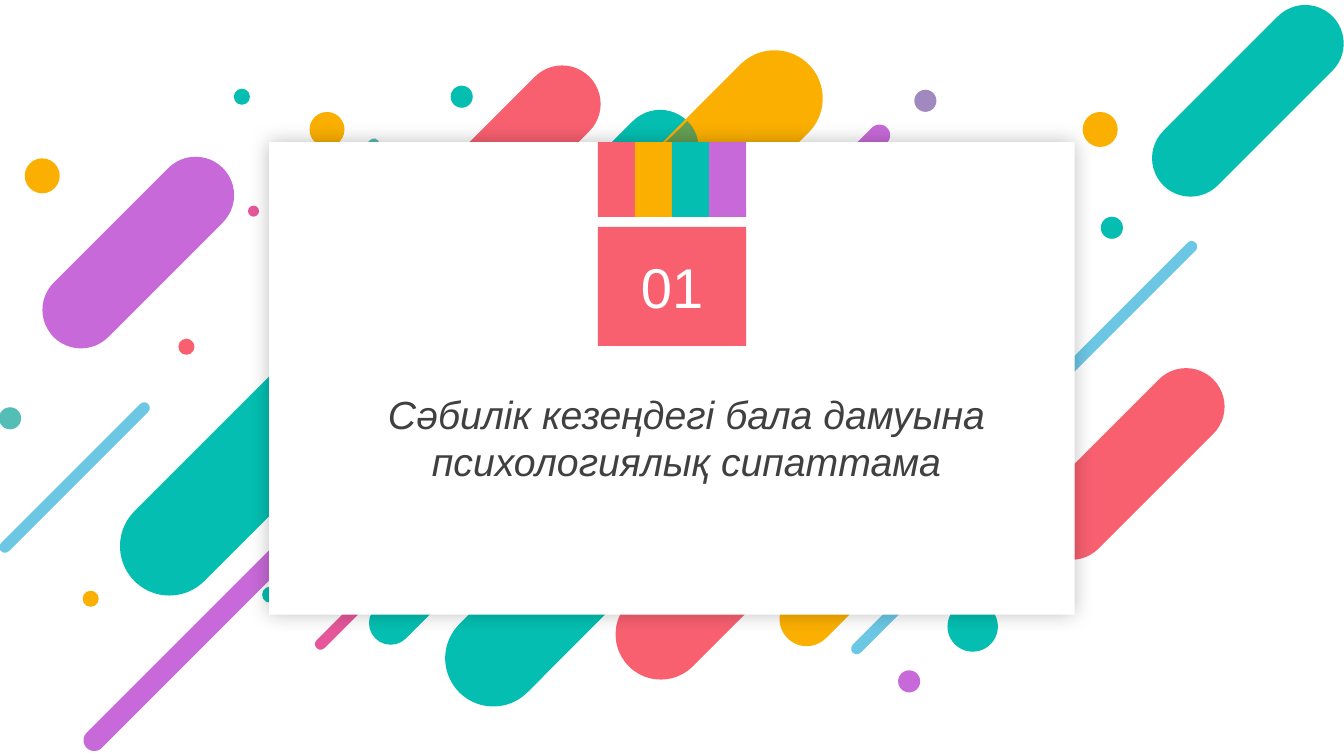
from dataclasses import dataclass
from math import cos, radians, sin, sqrt

from lxml import etree
from pptx import Presentation
from pptx.dml.color import RGBColor
from pptx.enum.shapes import MSO_SHAPE as Preset
from pptx.enum.text import MSO_ANCHOR as Anchor
from pptx.enum.text import MSO_AUTO_SIZE as AutoSize
from pptx.enum.text import PP_ALIGN as Align
from pptx.oxml.ns import qn
from pptx.util import Pt

COLOURS = {
    "teal": "04BFB1", "pale teal": "54BDB5", "red": "F86070", "amber": "FBAF01",
    "purple": "C769D8", "lilac": "A188BE", "pink": "E5579A", "blue": "6CC7E5",
    "overlap": "649F53", "white": "FFFFFF", "text": "404040", "shadow": "000000",
}


@dataclass(frozen=True)
class Pill:
    """A diagonal bar; span is the horizontal distance between its cap centres."""
    center_x: float
    center_y: float
    span: float
    thickness: float
    colour: str


@dataclass(frozen=True)
class Dot:
    center_x: float
    center_y: float
    diameter: float
    colour: str


WIDE_PILL = (81.9, 55)
LONG_PILL = (146.2, 68.8)
THIN_PILL = (99.5, 8)
CROSSING_PILL = Pill(430.6, 146.9, *WIDE_PILL, "teal")

PILLS = [
    Pill(281.2, 407.9, 104.4, 8, "pink"),
    CROSSING_PILL,
    Pill(891.4, 72, *WIDE_PILL, "teal"),
    Pill(173.4, 337.7, 104.8, 70.5, "teal"),
    Pill(360.6, 115.2, *WIDE_PILL, "red"),
    Pill(98.8, 180.4, *WIDE_PILL, "purple"),
    Pill(806.3, 331.4, *WIDE_PILL, "red"),
    Pill(604.8, 413.6, 57.2, 38.7, "amber"),
    Pill(425.5, 397.1, *LONG_PILL, "teal"),
    Pill(540.4, 384.7, 136.8, 64.6, "red"),
    Pill(480.2, 143.4, *LONG_PILL, "amber"),
    Pill(351.7, 372.4, 145.3, 31, "teal"),
    Pill(531, 193.8, 194.4, 15.3, "purple"),
    Pill(177.8, 418.3, 221, 15.3, "purple"),
    Pill(236.7, 133.4, 60.8, 8, "pale teal"),
    Pill(661.7, 413.6, *THIN_PILL, "blue"),
    Pill(801.5, 225.9, *THIN_PILL, "blue"),
    Pill(53.3, 341.1, *THIN_PILL, "blue"),
]

TINY, SMALL, MEDIUM, LARGE, HUGE = 7.9, 11.5, 15.8, 25, 36
DOTS = [
    Dot(661, 72, MEDIUM, "lilac"),
    Dot(694.8, 447.5, HUGE, "teal"),
    Dot(329.8, 69.1, MEDIUM, "teal"),
    Dot(7.2, 298.8, MEDIUM, "pale teal"),
    Dot(794.2, 162.7, MEDIUM, "teal"),
    Dot(649.4, 486.7, MEDIUM, "purple"),
    Dot(181.1, 150.8, TINY, "pink"),
    Dot(233.6, 92.5, LARGE, "amber"),
    Dot(30.2, 125.6, LARGE, "amber"),
    Dot(785.9, 92.5, LARGE, "amber"),
    Dot(172.8, 69.1, SMALL, "teal"),
    Dot(133.2, 247.7, SMALL, "red"),
    Dot(193, 424.8, SMALL, "teal"),
    Dot(64.8, 427.7, SMALL, "amber"),
]


def paint(shape, colour: str) -> None:
    shape.shadow.inherit = False
    shape.fill.solid()
    shape.fill.fore_color.rgb = RGBColor.from_string(COLOURS[colour])
    shape.line.fill.background()


def add_preset(shapes, preset, left: float, top: float, width: float,
               height: float, colour: str):
    shape = shapes.add_shape(preset, Pt(left), Pt(top), Pt(width), Pt(height))
    paint(shape, colour)
    return shape


def add_pill(shapes, pill: Pill) -> None:
    length = pill.span * sqrt(2) + pill.thickness
    shape = add_preset(shapes, Preset.ROUNDED_RECTANGLE,
                       pill.center_x - length / 2, pill.center_y - pill.thickness / 2,
                       length, pill.thickness, pill.colour)
    shape.adjustments[0] = 0.5
    shape.rotation = 315


def add_dot(shapes, dot: Dot) -> None:
    radius = dot.diameter / 2
    add_preset(shapes, Preset.OVAL, dot.center_x - radius, dot.center_y - radius,
               dot.diameter, dot.diameter, dot.colour)


def add_overlap(shapes, pill: Pill) -> None:
    """Tint the part of the pill that lies across the amber one."""
    radius = pill.thickness / 2
    cap_x, cap_y = pill.center_x + pill.span / 2, pill.center_y - pill.span / 2
    cap = [(cap_x + radius * cos(radians(angle)), cap_y + radius * sin(radians(angle)))
           for angle in range(45, -46, -5)]
    outline = [(383, 192.2), (373, 210.2), (389.5, 215.3), (409.3, 207.4), *cap]
    points = [(Pt(x), Pt(y)) for x, y in outline]
    builder = shapes.build_freeform(*points[0], scale=1.0)
    builder.add_line_segments(points[1:], close=True)
    paint(builder.convert_to_shape(), "overlap")


def add_glow(shape, blur: float, opacity: int) -> None:
    effects = shape._element.spPr.find(qn("a:effectLst"))
    shadow = etree.SubElement(effects, qn("a:outerShdw"), blurRad=str(Pt(blur)),
                              dist="0", dir="0", algn="ctr", rotWithShape="0")
    colour = etree.SubElement(shadow, qn("a:srgbClr"), val=COLOURS["shadow"])
    etree.SubElement(colour, qn("a:alpha"), val=str(opacity * 1000))


def write_text(shape, text: str, *, size: float, colour: str, italic: bool = False,
               anchor=Anchor.MIDDLE) -> None:
    frame = shape.text_frame
    frame.word_wrap = True
    frame.auto_size = AutoSize.NONE
    frame.vertical_anchor = anchor
    paragraph = frame.paragraphs[0]
    paragraph.alignment = Align.CENTER
    run = paragraph.add_run()
    run.text = text
    run.font.name = "Arial"
    run.font.size = Pt(size)
    run.font.italic = italic
    run.font.color.rgb = RGBColor.from_string(COLOURS[colour])


def main() -> None:
    presentation = Presentation()
    presentation.slide_width, presentation.slide_height = Pt(960), Pt(540)
    slide = presentation.slides.add_slide(presentation.slide_layouts[5])
    shapes = slide.shapes

    # Background pattern
    for pill in PILLS:
        add_pill(shapes, pill)
    add_overlap(shapes, CROSSING_PILL)
    for dot in DOTS:
        add_dot(shapes, dot)

    # Card
    card = add_preset(shapes, Preset.RECTANGLE, 192.3, 101.5, 575.4, 337.5, "white")
    add_glow(card, blur=15, opacity=25)

    # Striped ribbon and section number
    ribbon_left, ribbon_width = 427, 106
    stripes = ["red", "amber", "teal", "purple"]
    stripe_width = ribbon_width / len(stripes)
    ribbon = shapes.add_group_shape()
    for index, colour in enumerate(stripes):
        add_preset(ribbon.shapes, Preset.RECTANGLE, ribbon_left + index * stripe_width,
                   101.5, stripe_width, 53.5, colour)
    number = add_preset(shapes, Preset.RECTANGLE, ribbon_left, 162, ribbon_width, 85, "red")
    write_text(number, "01", size=40, colour="white")

    # Title, brought in front of the card
    title = shapes.title
    title.left, title.top, title.width, title.height = Pt(221), Pt(275), Pt(538.5), Pt(75)
    write_text(title, "Сәбилік кезеңдегі бала дамуына психологиялық сипаттама",
               size=28, colour="text", italic=True, anchor=Anchor.TOP)
    shapes._spTree.append(title._element)

    presentation.save("out.pptx")


if __name__ == "__main__":
    main()
